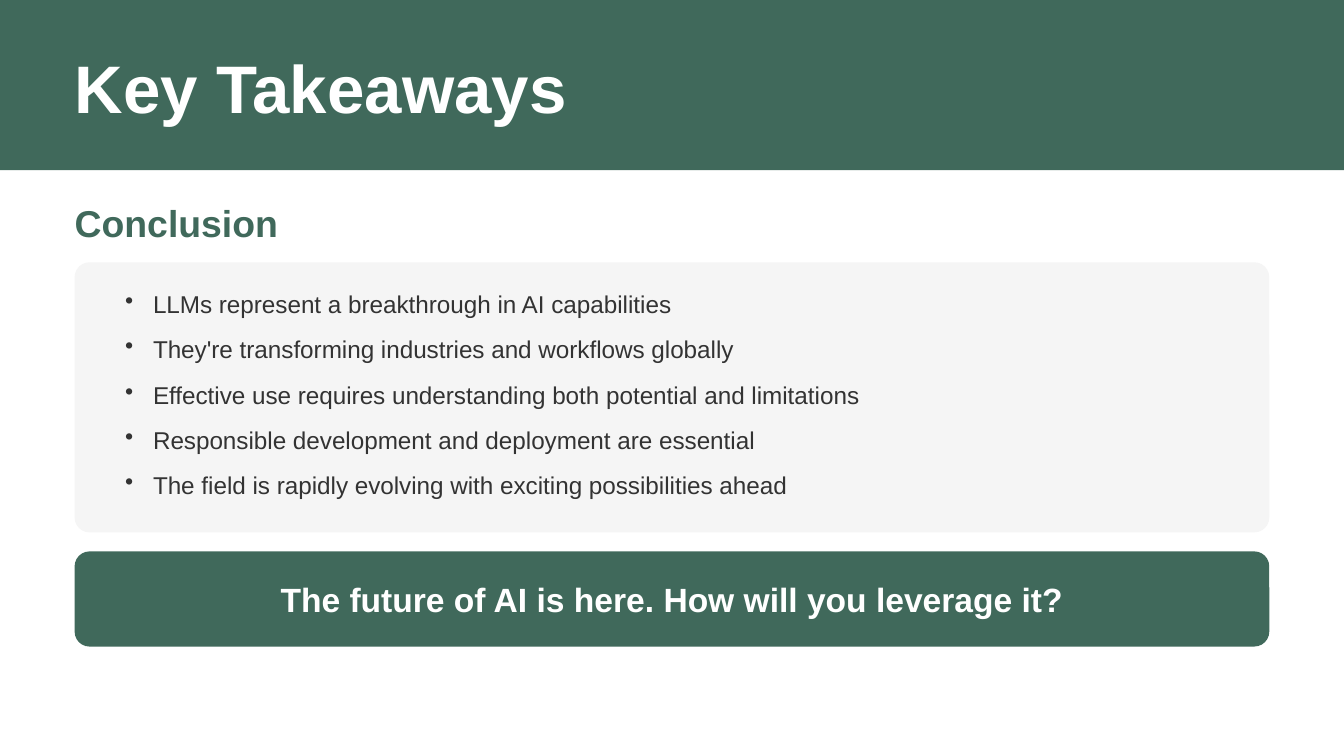
import pptx
import pptx.dml.color
import pptx.enum.shapes
import pptx.enum.text
import pptx.oxml
import pptx.oxml.ns
import pptx.util

Pt = pptx.util.Pt
SHAPE = pptx.enum.shapes.MSO_SHAPE
ALIGN = pptx.enum.text.PP_ALIGN

COLORS = {"green": "40695B", "panel": "F5F5F5", "text": "333333", "white": "FFFFFF"}
FONT = "Arial"
MARGIN = 40
CONTENT_WIDTH = 640
CORNER = 8
INDENT = 15

TAKEAWAYS = [
    "LLMs represent a breakthrough in AI capabilities",
    "They're transforming industries and workflows globally",
    "Effective use requires understanding both potential and limitations",
    "Responsible development and deployment are essential",
    "The field is rapidly evolving with exciting possibilities ahead",
]


def rgb(name):
    return pptx.dml.color.RGBColor.from_string(COLORS[name])


def add_block(s, x, y, w, h, color, corner=0):
    """Add a filled rectangle, rounded when a corner radius is given."""
    kind = SHAPE.ROUNDED_RECTANGLE if corner else SHAPE.RECTANGLE
    sp = s.shapes.add_shape(kind, Pt(x), Pt(y), Pt(w), Pt(h))
    if corner:
        sp.adjustments[0] = corner / min(w, h)
    sp.fill.solid()
    sp.fill.fore_color.rgb = rgb(color)
    sp.line.fill.background()
    sp.shadow.inherit = False
    return sp


def add_box(s, x, y, w, h):
    return s.shapes.add_textbox(Pt(x), Pt(y), Pt(w), Pt(h))


def add_bullet(p):
    pPr = p._p.get_or_add_pPr()
    pPr.set("marL", str(Pt(INDENT)))
    pPr.set("indent", str(-Pt(INDENT)))
    bullet = pptx.oxml.parse_xml(f'<a:buChar {pptx.oxml.ns.nsdecls("a")} char="•"/>')
    pPr.append(bullet)


def write_text(sp, lines, size, color, bold=False, align=ALIGN.LEFT,
               left_inset=0, line_spacing=None, space_after=0, bullets=False):
    """Fill a shape with one paragraph per line."""
    tf = sp.text_frame
    tf.word_wrap = True
    tf.auto_size = pptx.enum.text.MSO_AUTO_SIZE.NONE
    tf.vertical_anchor = pptx.enum.text.MSO_ANCHOR.TOP
    tf.margin_left = Pt(left_inset)
    tf.margin_top = tf.margin_right = tf.margin_bottom = 0
    for i, line in enumerate(lines):
        p = tf.add_paragraph() if i else tf.paragraphs[0]
        p.alignment = align
        p.space_after = Pt(space_after)
        if line_spacing:
            p.line_spacing = Pt(line_spacing)
        if bullets:
            add_bullet(p)
        r = p.add_run()
        r.text = line
        r.font.name = FONT
        r.font.size = Pt(size)
        r.font.bold = bold
        r.font.color.rgb = rgb(color)


def add_header(s, text):
    band = add_block(s, 0, 0, 720, 91.2, "green")
    title = s.shapes.title
    title.left, title.top, title.width, title.height = Pt(MARGIN), Pt(25), Pt(653), Pt(41)
    title.element.addprevious(band.element)  # keep the band behind the title
    write_text(title, [text], 36, "white", bold=True)


def main():
    prs = pptx.Presentation()
    prs.slide_width, prs.slide_height = Pt(720), Pt(405)
    s = prs.slides.add_slide(prs.slide_layouts[5])

    # Header band and section heading
    add_header(s, "Key Takeaways")
    write_text(add_box(s, MARGIN, 107.2, 653, 23), ["Conclusion"], 20, "green",
               bold=True, space_after=10)

    # Takeaway list on its panel
    add_block(s, MARGIN, 140.5, CONTENT_WIDTH, 144.7, "panel", CORNER)
    write_text(add_box(s, 52, 152.5, 616, 115), TAKEAWAYS, 13, "text",
               left_inset=INDENT, line_spacing=18.2, space_after=6, bullets=True)

    # Closing banner
    add_block(s, MARGIN, 295.4, CONTENT_WIDTH, 51, "green", CORNER)
    write_text(add_box(s, 49, 310.4, 622, 21),
               ["The future of AI is here. How will you leverage it?"], 18, "white",
               bold=True, align=ALIGN.CENTER)

    prs.save("out.pptx")


if __name__ == "__main__":
    main()
